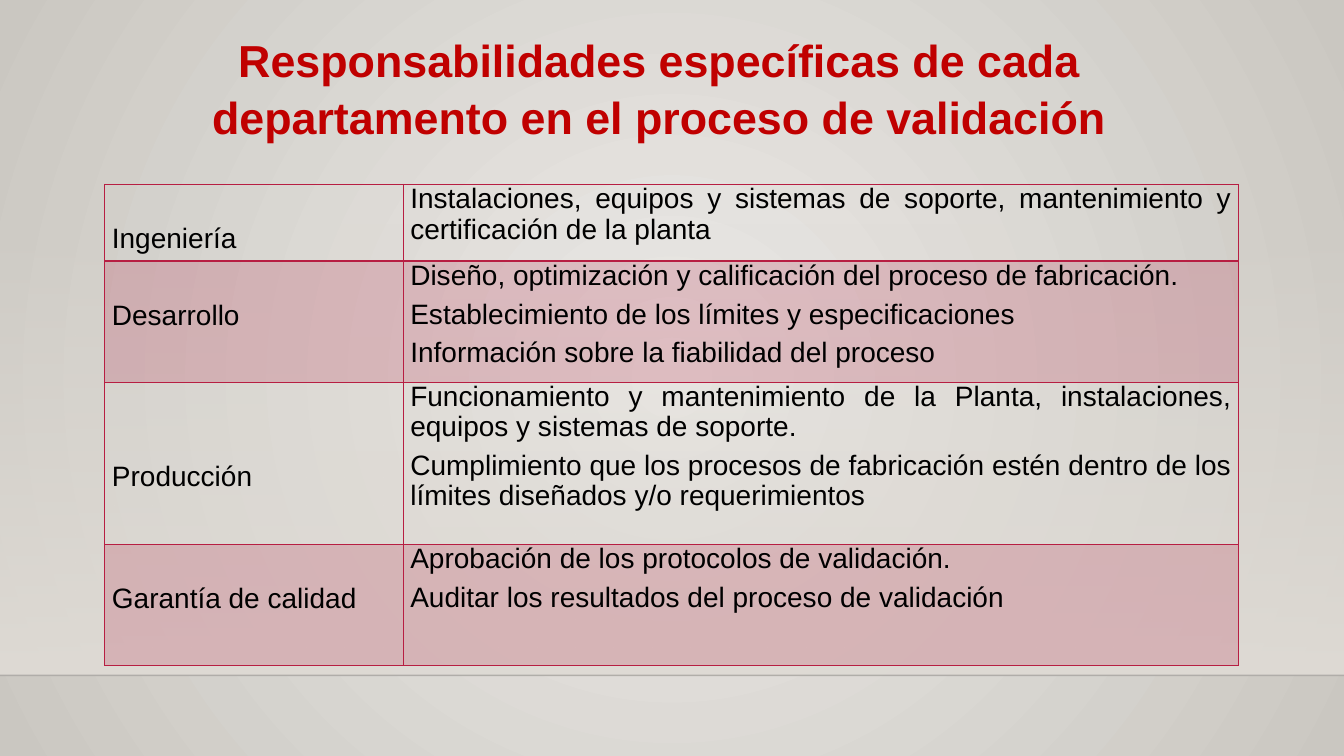
from dataclasses import dataclass

from lxml import etree
from pptx import Presentation
from pptx.dml.color import RGBColor
from pptx.enum.shapes import MSO_CONNECTOR, MSO_SHAPE
from pptx.enum.text import MSO_ANCHOR, PP_ALIGN
from pptx.oxml.ns import qn
from pptx.util import Cm, Pt

CENTER, JUSTIFY = PP_ALIGN.CENTER, PP_ALIGN.JUSTIFY
TOP = MSO_ANCHOR.TOP
RECTANGLE = MSO_SHAPE.RECTANGLE
STRAIGHT = MSO_CONNECTOR.STRAIGHT
BLANK_LAYOUT = 6


@dataclass(frozen=True)
class Theme:
    font: str = "Arial"
    title_size: int = 32
    body_size: int = 20
    title: str = "C00000"
    body: str = "000000"
    accent: str = "B71E42"
    center: str = "ECEAE7"
    edge: str = "CAC7C1"
    floor: str = "DFDBD5"
    rule: str = "000001"


THEME = Theme()
WIDTH, HEIGHT = Cm(33.87), Cm(19.05)
FLOOR_TOP, FLOOR_BOTTOM = Cm(5.61), Cm(17.02)
COLUMN_WIDTHS = (Cm(7.52), Cm(21.06))
LABEL_STEP = Cm(1.01)

TITLE = "Responsabilidades específicas de cada departamento en el proceso de validación"

# Department, lines its label is lowered by, row height, responsibilities
DEPARTMENTS = (
    ("Ingeniería", 1, Cm(1.93), (
        "Instalaciones, equipos y sistemas de soporte, mantenimiento y certificación de la planta",
    )),
    ("Desarrollo", 1, Cm(3.05), (
        "Diseño, optimización y calificación del proceso de fabricación.",
        "Establecimiento de los límites y especificaciones",
        "Información sobre la fiabilidad del proceso",
    )),
    ("Producción", 2, Cm(4.09), (
        "Funcionamiento y mantenimiento de la Planta, instalaciones, equipos y sistemas de soporte.",
        "Cumplimiento que los procesos de fabricación estén dentro de los límites diseñados "
        "y/o requerimientos",
    )),
    ("Garantía de calidad", 1, Cm(3.05), (
        "Aprobación de los protocolos de validación.",
        "Auditar los resultados del proceso de validación",
    )),
)


def rgb(color):
    return RGBColor.from_string(color)


def add_alpha(parent, percent):
    """Make every colour below an XML element partly transparent."""
    for color in parent.iter(qn("a:srgbClr")):
        etree.SubElement(color, qn("a:alpha"), val=str(percent * 1000))


def write_text(frame, paragraphs, *, size, color, align, bold=False, after=0, spacing=1.0):
    frame.word_wrap = True
    for index, text in enumerate(paragraphs):
        paragraph = frame.paragraphs[0] if index == 0 else frame.add_paragraph()
        paragraph.alignment = align
        paragraph.space_after = Pt(after)
        paragraph.line_spacing = spacing
        run = paragraph.add_run()
        run.text = text
        run.font.name = THEME.font
        run.font.size = Pt(size)
        run.font.bold = bold
        run.font.color.rgb = rgb(color)


def set_gradient(fill, start, end):
    fill.gradient()
    for stop, color in zip(fill.gradient_stops, (start, end)):
        stop.color.rgb = rgb(color)
    fill.gradient_stops[0].position = 0
    fill.gradient_stops[1].position = 1


def paint_background(slide):
    set_gradient(slide.background.fill, THEME.center, THEME.edge)
    gradient = next(slide.element.iter(qn("a:gradFill")))
    gradient.remove(gradient.find(qn("a:lin")))
    path = etree.SubElement(gradient, qn("a:path"), {"path": "circle"})
    etree.SubElement(path, qn("a:fillToRect"), l="50000", t="50000", r="50000", b="50000")


def add_floor(slide):
    """Add the band that fades in downwards and the rule under it."""
    band = slide.shapes.add_shape(RECTANGLE, 0, FLOOR_TOP, WIDTH, FLOOR_BOTTOM - FLOOR_TOP)
    band.shadow.inherit = False
    band.line.fill.background()
    set_gradient(band.fill, THEME.floor, THEME.floor)
    band.fill.gradient_angle = 270
    add_alpha(next(band.element.iter(qn("a:gs"))), 0)

    rule = slide.shapes.add_connector(STRAIGHT, 0, FLOOR_BOTTOM, WIDTH, FLOOR_BOTTOM)
    rule.line.color.rgb = rgb(THEME.rule)
    rule.line.width = Pt(1)
    properties = rule.element.spPr
    add_alpha(properties, 20)
    etree.SubElement(properties, qn("a:effectLst"))


def add_title(slide):
    box = slide.shapes.add_textbox(Cm(3.35), Cm(0.64), Cm(26.54), Cm(3))
    write_text(box.text_frame, [TITLE], size=THEME.title_size, color=THEME.title,
               align=CENTER, bold=True, spacing=1.05)


def set_borders(cell, bottom_width):
    properties = cell._tc.get_or_add_tcPr()
    for side, width in (("L", 1), ("R", 1), ("T", 1), ("B", bottom_width)):
        line = etree.SubElement(properties, qn(f"a:ln{side}"), w=str(Pt(width)))
        fill = etree.SubElement(line, qn("a:solidFill"))
        etree.SubElement(fill, qn("a:srgbClr"), val=THEME.accent)


def format_cell(cell, paragraphs, *, top, shaded, bottom_width):
    cell.margin_left = cell.margin_right = Cm(0.18)
    cell.margin_top, cell.margin_bottom = top, 0
    cell.vertical_anchor = TOP
    set_borders(cell, bottom_width)
    if shaded:
        cell.fill.solid()
        cell.fill.fore_color.rgb = rgb(THEME.accent)
        add_alpha(cell._tc.tcPr.find(qn("a:solidFill")), 20)
    else:
        cell.fill.background()
    write_text(cell.text_frame, paragraphs, size=THEME.body_size, color=THEME.body,
               align=JUSTIFY, after=6, spacing=0.97)


def add_department_table(slide):
    heights = [height for _, _, height, _ in DEPARTMENTS]
    table = slide.shapes.add_table(len(DEPARTMENTS), len(COLUMN_WIDTHS), Cm(2.64), Cm(4.65),
                                   sum(COLUMN_WIDTHS), sum(heights)).table
    table.first_row = table.horz_banding = False
    for column, width in zip(table.columns, COLUMN_WIDTHS):
        column.width = width
    for index, (name, lowered, height, duties) in enumerate(DEPARTMENTS):
        table.rows[index].height = height
        look = {"shaded": index % 2 == 1, "bottom_width": 2 if index == 0 else 1}
        format_cell(table.cell(index, 0), [name], top=lowered * LABEL_STEP, **look)
        format_cell(table.cell(index, 1), duties, top=0, **look)


def main():
    presentation = Presentation()
    presentation.slide_width, presentation.slide_height = WIDTH, HEIGHT
    slide = presentation.slides.add_slide(presentation.slide_layouts[BLANK_LAYOUT])
    paint_background(slide)
    add_floor(slide)
    add_department_table(slide)
    add_title(slide)
    presentation.save("out.pptx")


if __name__ == "__main__":
    main()
